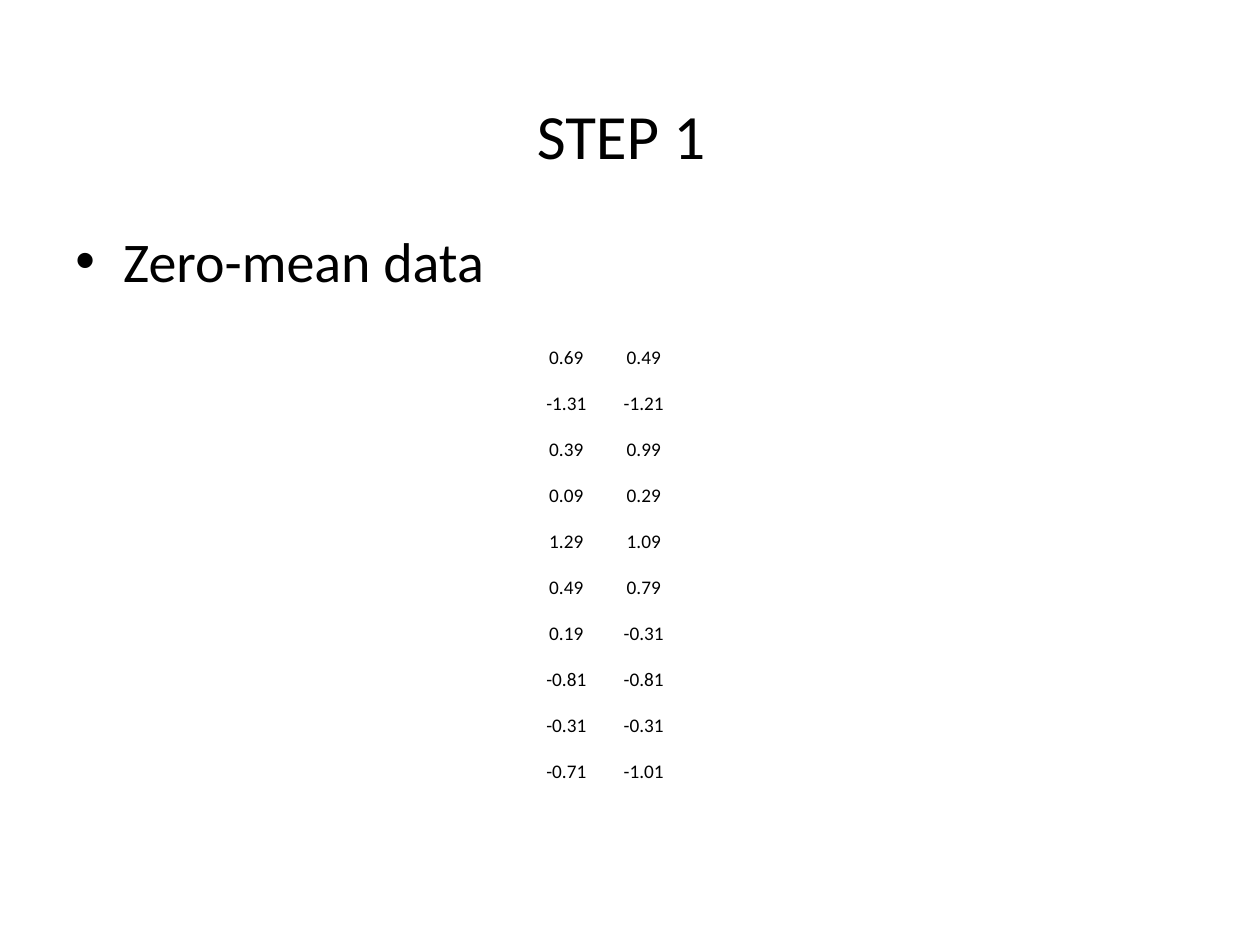
"""Build the STEP 1 slide with its table of zero-mean data."""
from lxml.etree import SubElement
from pptx import Presentation
from pptx.dml.color import RGBColor
from pptx.enum.text import MSO_ANCHOR, PP_ALIGN
from pptx.oxml.ns import qn
from pptx.util import Inches, Pt

BLACK = RGBColor(0, 0, 0)
FONT = "Calibri"
DATA = [
    ("0.69", "0.49"),
    ("-1.31", "-1.21"),
    ("0.39", "0.99"),
    ("0.09", "0.29"),
    ("1.29", "1.09"),
    ("0.49", "0.79"),
    ("0.19", "-0.31"),
    ("-0.81", "-0.81"),
    ("-0.31", "-0.31"),
    ("-0.71", "-1.01"),
]


def set_text(tf, text, size, align=PP_ALIGN.LEFT, color=BLACK, font=FONT):
    p = tf.paragraphs[0]
    p.alignment = align
    r = p.add_run()
    r.text = text
    r.font.size = Pt(size)
    r.font.name = font
    r.font.color.rgb = color
    return p


class SlideBuilder:
    def __init__(self, prs):
        self.s = prs.slides.add_slide(prs.slide_layouts[5])

    def title(self, text, left, top, width, height):
        sp = self.s.shapes.title
        sp.left, sp.top = Inches(left), Inches(top)
        sp.width, sp.height = Inches(width), Inches(height)
        tf = sp.text_frame
        tf.vertical_anchor = MSO_ANCHOR.MIDDLE
        set_text(tf, text, 36, PP_ALIGN.CENTER)

    def bullet(self, text, left, top, width, height, indent=0.38):
        sp = self.s.shapes.add_textbox(
            Inches(left), Inches(top), Inches(width), Inches(height))
        tf = sp.text_frame
        tf.word_wrap = True
        p = set_text(tf, text, 32)
        pPr = p._p.get_or_add_pPr()
        pPr.set("marL", str(Inches(indent)))
        pPr.set("indent", str(-Inches(indent)))
        SubElement(pPr, qn("a:buFont"), typeface="Arial")
        SubElement(pPr, qn("a:buChar"), char="•")

    def table(self, rows, left, top, col_widths, height):
        frame = self.s.shapes.add_table(
            len(rows), len(col_widths), Inches(left), Inches(top),
            Inches(sum(col_widths)), Inches(height))
        table = frame.table
        table.first_row = table.horz_banding = False
        for col, width in zip(table.columns, col_widths):
            col.width = Inches(width)
        for i, row in enumerate(rows):
            for j, value in enumerate(row):
                cell = table.cell(i, j)
                cell.fill.background()
                cell.vertical_anchor = MSO_ANCHOR.BOTTOM
                cell.margin_left = cell.margin_right = 0
                cell.margin_top = cell.margin_bottom = 0
                set_text(cell.text_frame, value, 11, PP_ALIGN.CENTER)


def main():
    prs = Presentation()
    prs.slide_width, prs.slide_height = Inches(10), Inches(7.5)
    slide = SlideBuilder(prs)
    slide.title("STEP 1", 0.43, 0.44, 9, 1.25)
    slide.bullet("Zero-mean data", 0.5, 1.75, 9, 4.95)
    slide.table(DATA, 4.21, 2.57, (0.57, 0.66), 3.65)
    prs.save("out.pptx")


if __name__ == "__main__":
    main()
